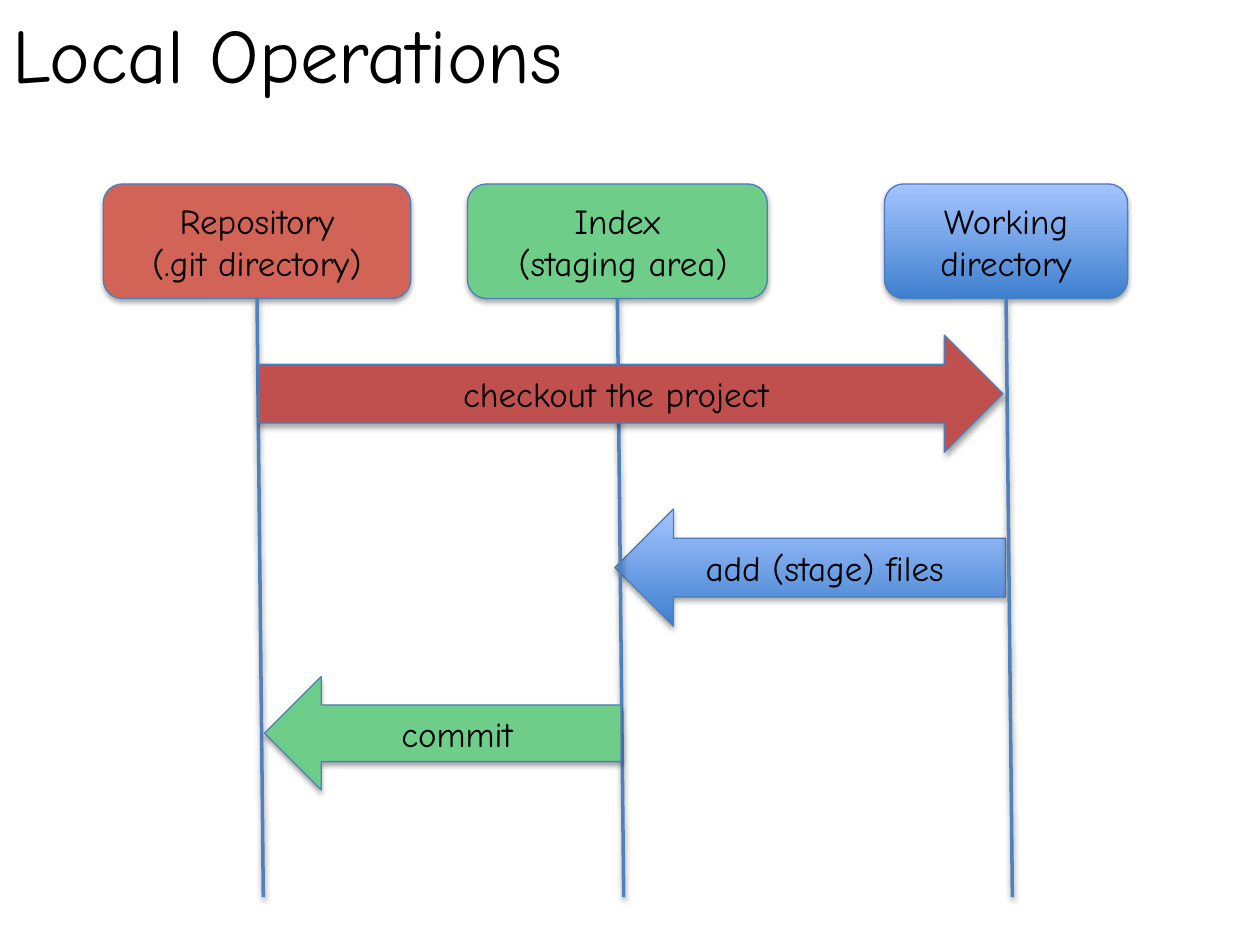
"""Draw the local operations of version control as a sequence of lifelines and arrows."""
from dataclasses import dataclass

from lxml import etree
from pptx import Presentation
from pptx.dml.color import RGBColor
from pptx.enum.shapes import MSO_CONNECTOR, MSO_SHAPE
from pptx.enum.text import MSO_ANCHOR, MSO_AUTO_SIZE, PP_ALIGN
from pptx.oxml.ns import qn
from pptx.util import Inches, Pt

BOX = MSO_SHAPE.ROUNDED_RECTANGLE
LEFT = MSO_SHAPE.LEFT_ARROW
RIGHT = MSO_SHAPE.RIGHT_ARROW
STRAIGHT = MSO_CONNECTOR.STRAIGHT
FIT = MSO_AUTO_SIZE.SHAPE_TO_FIT_TEXT
TOP, MIDDLE = MSO_ANCHOR.TOP, MSO_ANCHOR.MIDDLE
START, CENTER = PP_ALIGN.LEFT, PP_ALIGN.CENTER

BLACK = RGBColor(0x00, 0x00, 0x00)
CORAL = RGBColor(0xD2, 0x64, 0x57)
RED = RGBColor(0xC0, 0x50, 0x4D)
GREEN = RGBColor(0x6E, 0xCD, 0x88)
DEEP = RGBColor(0x3F, 0x80, 0xCE)
PALE = RGBColor(0xA4, 0xC4, 0xFF)
EDGE = RGBColor(0x4B, 0x7E, 0xBC)
LIFE = RGBColor(0x4F, 0x81, 0xBD)

FONT = "Comic Neue"
COLS, ROWS = 100, 75
CELL = Inches(0.1)
HEAD_ROW, HEAD_TALL = 14.6, 9.1
LIFE_END, DRIFT = 71.2, 0.5


@dataclass
class Block:
    """A filled shape with its place on the grid, fills and lines of text."""
    kind: int
    col: float
    row: float
    wide: float
    tall: float
    fills: tuple
    lines: tuple


def span(count: float) -> int:
    """Turn grid cells into a length."""
    return round(count * CELL)


def write(frame, lines: tuple, size: int, align: int) -> None:
    """Write the lines as runs of one paragraph."""
    para = frame.paragraphs[0]
    para.alignment = align
    for num, line in enumerate(lines):
        if num:
            para.add_line_break()
        run = para.add_run()
        run.text = line
        run.font.name = FONT
        run.font.size = Pt(size)
        run.font.color.rgb = BLACK


def shade(props, dist: int, alpha: int) -> None:
    """Give shape properties a soft shadow that falls straight down."""
    for old in props.findall(qn("a:effectLst")):
        props.remove(old)
    effect = etree.SubElement(props, qn("a:effectLst"))
    outer = etree.SubElement(effect, qn("a:outerShdw"), blurRad="40000",
                             dist=str(dist), dir="5400000", rotWithShape="0")
    color = etree.SubElement(outer, qn("a:srgbClr"), val="000000")
    etree.SubElement(color, qn("a:alpha"), val=str(alpha * 1000))


def paint(fill, colors: tuple) -> None:
    """Fill with one colour, or with a gradient that rises through two."""
    if len(colors) == 1:
        fill.solid()
        fill.fore_color.rgb = colors[0]
        return
    fill.gradient()
    fill.gradient_angle = 90
    for stop, color in zip(fill.gradient_stops, colors):
        stop.color.rgb = color


def draw(slide, block: Block):
    """Draw a block and return its shape."""
    shape = slide.shapes.add_shape(block.kind, span(block.col), span(block.row),
                                   span(block.wide), span(block.tall))
    paint(shape.fill, block.fills)
    shape.line.color.rgb = EDGE
    shape.line.width = Pt(0.75)
    shape.shadow.inherit = False
    shade(shape.element.spPr, 23000, 35)
    frame = shape.text_frame
    frame.word_wrap = True
    frame.vertical_anchor = MIDDLE
    write(frame, block.lines, 20, CENTER)
    return shape


def drop(slide, head) -> None:
    """Hang a lifeline from the foot of a head box."""
    mid = head.left + head.width // 2
    line = slide.shapes.add_connector(STRAIGHT, mid, head.top + head.height,
                                      mid + span(DRIFT), span(LIFE_END))
    line.begin_connect(head, 2)
    line.line.color.rgb = LIFE
    line.line.width = Pt(2)
    shade(line.element.spPr, 20000, 38)


def name(slide, text: str) -> None:
    """Place the slide title in the top left corner."""
    title = slide.shapes.title
    title.left, title.top = 0, 0
    title.width, title.height = span(64.7), span(8.4)
    frame = title.text_frame
    frame.word_wrap = True
    frame.auto_size = FIT
    frame.vertical_anchor = TOP
    write(frame, (text,), 44, START)


def main() -> None:
    """Build and save the slide."""
    deck = Presentation()
    deck.slide_width, deck.slide_height = span(COLS), span(ROWS)
    slide = deck.slides.add_slide(deck.slide_layouts[5])
    name(slide, "Local Operations")

    blue = (DEEP, PALE)
    draw(slide, Block(LEFT, 48.8, 40.4, 31, 9.3, blue, ("add (stage) files",)))
    heads = [
        draw(slide, Block(BOX, col, HEAD_ROW, wide, HEAD_TALL, fills, lines))
        for col, wide, fills, lines in (
            (70.2, 19.3, blue, ("Working directory",)),
            (8.2, 24.4, (CORAL,), ("Repository", "(.git directory)")),
            (37.1, 23.8, (GREEN,), ("Index", " (staging area)")),
        )
    ]
    for head in heads:
        drop(slide, head)
    draw(slide, Block(RIGHT, 20.5, 26.6, 59.1, 9.3, (RED,), ("checkout the project",)))
    draw(slide, Block(LEFT, 21, 53.7, 28.3, 9, (GREEN,), ("commit",)))
    deck.save("out.pptx")


if __name__ == "__main__":
    main()
